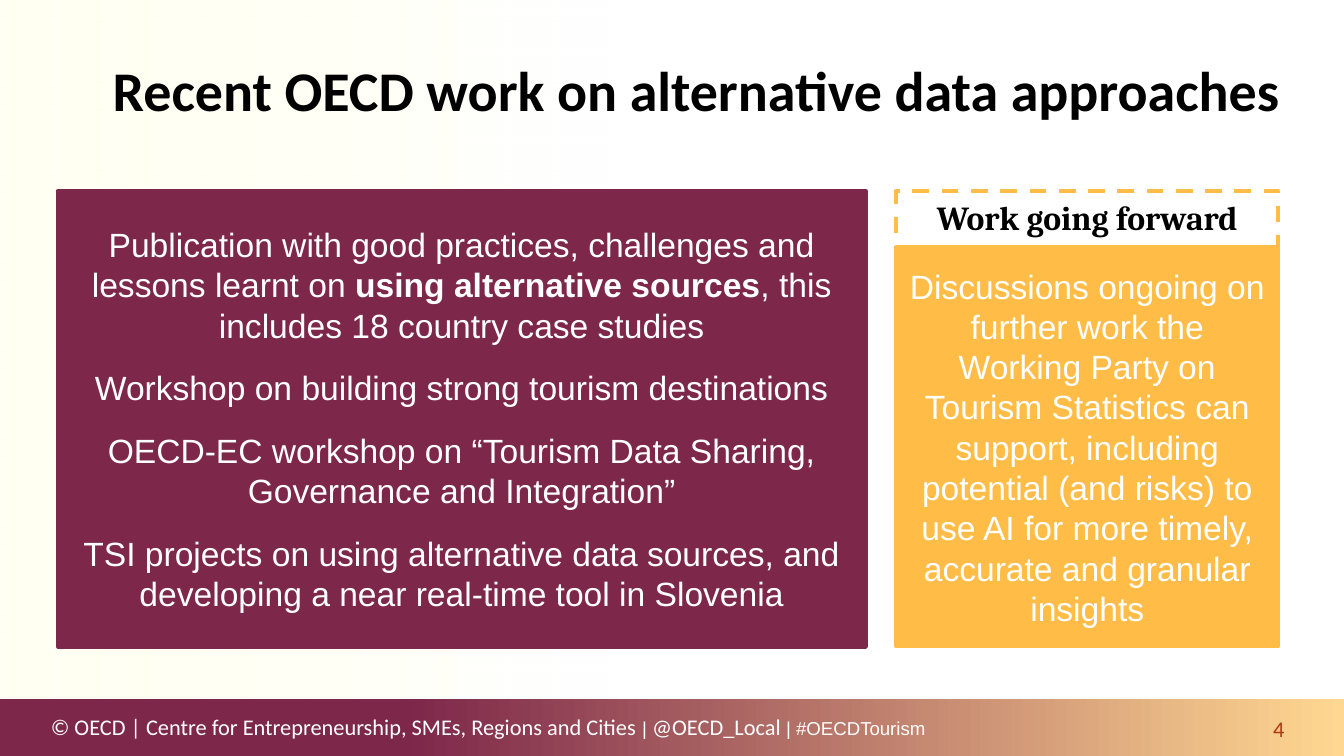
from lxml import etree
from pptx import Presentation
from pptx.dml.color import RGBColor
from pptx.enum.dml import MSO_LINE
from pptx.enum.shapes import MSO_SHAPE
from pptx.enum.text import MSO_ANCHOR, PP_ALIGN
from pptx.oxml.ns import qn
from pptx.util import Inches, Pt

RECTANGLE = MSO_SHAPE.RECTANGLE
MIDDLE = MSO_ANCHOR.MIDDLE
LEFT, CENTER = PP_ALIGN.LEFT, PP_ALIGN.CENTER
DASH = MSO_LINE.DASH

WHITE = RGBColor(0xFF, 0xFF, 0xFF)
BLACK = RGBColor(0x00, 0x00, 0x00)
PLUM = RGBColor(0x7D, 0x27, 0x4A)
AMBER = RGBColor(0xFF, 0xBD, 0x47)
SAND = RGBColor(0xFF, 0xD7, 0x91)
IVORY = RGBColor(0xFF, 0xFF, 0xE7)
RUST = RGBColor(0xB5, 0x35, 0x13)

# Content: each paragraph is a list of (text, font, size, bold, colour)


def body(text, bold=False):
    return text, "Arial", 18, bold, WHITE


TITLE = [[("Recent OECD work on alternative data approaches", "Calibri", 30, True, BLACK)]]
RECENT_WORK = [
    [body("Publication with good practices, challenges and lessons learnt on"),
     body(" using alternative sources", True),
     body(", this includes 18 country case studies")],
    [body("Workshop on building strong tourism destinations")],
    [body("OECD-EC workshop on “Tourism Data Sharing, Governance and Integration”")],
    [body("TSI projects on using alternative data sources, and developing "
          "a near real-time tool in Slovenia")],
]
FORWARD_HEADING = [[("Work going forward", "Cambria", 18, True, BLACK)]]
FORWARD_WORK = [[body(
    "Discussions ongoing on further work the Working Party on Tourism Statistics can support, "
    "including potential (and risks) to use AI for more timely, accurate and granular insights")]]
FOOTER = [[
    ("© OECD | Centre for Entrepreneurship, SMEs, Regions and Cities", "Calibri", 12, False, WHITE),
    (" | ", "Arial", 10, False, WHITE),
    ("@OECD_Local", "Calibri", 12, False, WHITE),
    (" | #OECDTourism", "Arial", 10, False, WHITE),
]]
PAGE_NUMBER = [[("4", "Calibri", 12, False, RUST)]]

# Layout in inches
SLIDE_WIDTH = 10
SLIDE_HEIGHT = SLIDE_WIDTH * 9 / 16
FOOTER_TOP = 5.2
PANEL_TOP, PANEL_BOTTOM = 1.42, 4.81
HEADING_HEIGHT = 0.42
RECENT_LEFT, RECENT_WIDTH = 0.43, 6.01
FORWARD_LEFT, FORWARD_WIDTH = 6.67, 2.84

presentation = Presentation()
presentation.slide_width = Inches(SLIDE_WIDTH)
presentation.slide_height = Inches(SLIDE_HEIGHT)
slide = presentation.slides.add_slide(presentation.slide_layouts[6])


def add_rectangle(left, top, width, height):
    shape = slide.shapes.add_shape(
        RECTANGLE, Inches(left), Inches(top), Inches(width), Inches(height))
    shape.shadow.inherit = False
    return shape


def add_gradient(left, top, width, height, stops):
    shape = add_rectangle(left, top, width, height)
    shape.line.fill.background()
    shape.fill.gradient()
    shape.fill.gradient_angle = 180
    for stop, (position, colour) in zip(shape.fill.gradient_stops, stops):
        stop.position = position
        stop.color.rgb = colour
    return shape


def write(shape, paragraphs, align, inset=None, space_after=None, line_spacing=None):
    frame = shape.text_frame
    frame.word_wrap = True
    frame.vertical_anchor = MIDDLE
    if inset is not None:
        frame.margin_left = frame.margin_right = Inches(inset)
        frame.margin_top = frame.margin_bottom = Inches(inset)
    for index, runs in enumerate(paragraphs):
        paragraph = frame.add_paragraph() if index else frame.paragraphs[0]
        paragraph.alignment = align
        paragraph.space_after = space_after
        paragraph.line_spacing = line_spacing
        for text, font, size, bold, colour in runs:
            run = paragraph.add_run()
            run.text = text
            run.font.name = font
            run.font.size = Pt(size)
            run.font.bold = bold
            run.font.color.rgb = colour


def add_text(left, top, width, height, paragraphs, align, **options):
    box = slide.shapes.add_textbox(Inches(left), Inches(top), Inches(width), Inches(height))
    write(box, paragraphs, align, **options)


def add_panel(left, top, width, height, colour, paragraphs, filled=True, **options):
    shape = add_rectangle(left, top, width, height)
    shape.line.color.rgb = colour
    shape.line.width = Pt(2.25)
    if filled:
        shape.fill.solid()
        shape.fill.fore_color.rgb = colour
    else:
        shape.fill.background()
        shape.line.dash_style = DASH
    write(shape, paragraphs, CENTER, inset=0.08, **options)


# Footer band and ivory wash
add_gradient(0, FOOTER_TOP, SLIDE_WIDTH, SLIDE_HEIGHT - FOOTER_TOP, [(0, SAND), (0.7, PLUM)])
wash = add_gradient(0, 0, 4.52, FOOTER_TOP, [(0, WHITE), (1, IVORY)])
ivory_colour = list(wash.element.iter(qn("a:srgbClr")))[-1]
etree.SubElement(ivory_colour, qn("a:alpha"), val="50000")

# Footer text, title and page number
add_text(0.28, 5.31, 7, 0.2, FOOTER, LEFT)
add_text(0.74, 0.15, 8.98, 1.06, TITLE, LEFT, line_spacing=Pt(34))
add_text(9.33, 5.32, 0.37, 0.2, PAGE_NUMBER, CENTER)

# Panels
forward_top = PANEL_TOP + HEADING_HEIGHT
add_panel(RECENT_LEFT, PANEL_TOP, RECENT_WIDTH, PANEL_BOTTOM - PANEL_TOP,
          PLUM, RECENT_WORK, space_after=Pt(12))
add_panel(FORWARD_LEFT, forward_top, FORWARD_WIDTH, PANEL_BOTTOM - forward_top,
          AMBER, FORWARD_WORK, space_after=Pt(12))
add_panel(FORWARD_LEFT, PANEL_TOP, FORWARD_WIDTH, HEADING_HEIGHT,
          AMBER, FORWARD_HEADING, filled=False, line_spacing=0.9)

presentation.save("out.pptx")
